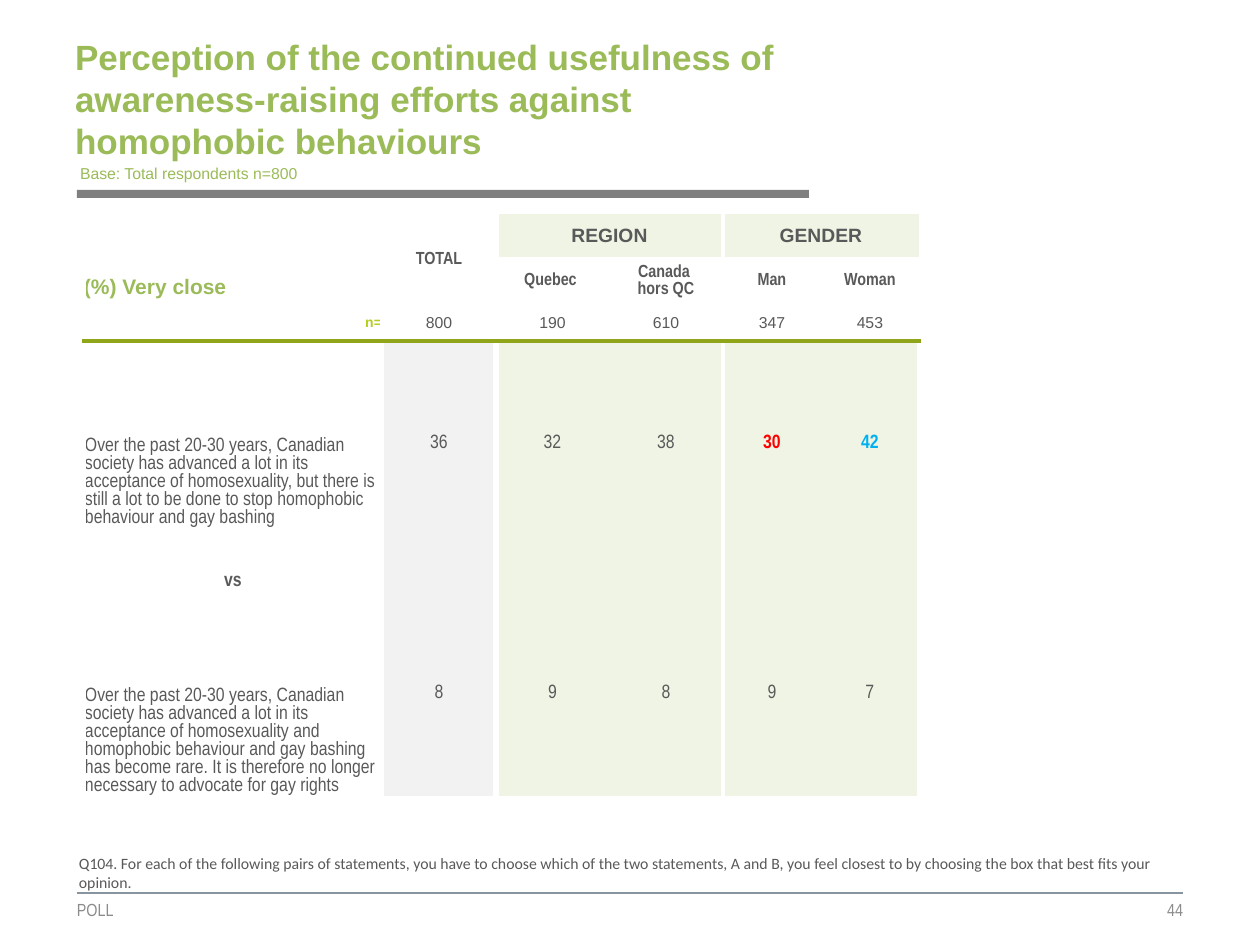
from dataclasses import dataclass
from typing import Any

import pptx
import pptx.util
import pptx.dml.color
import pptx.enum.shapes
import pptx.enum.text
import pptx.oxml

PX = 914400 // 126
ALIGN = pptx.enum.text.PP_ALIGN
ANCHOR = pptx.enum.text.MSO_ANCHOR
AUTO = pptx.enum.text.MSO_AUTO_SIZE

GREEN, DARK, PALE, GREY = "9BBB59", "595959", "EFF4E4", "F2F2F2"
LIME, OLIVE, RED, BLUE = "B5CC22", "91A51B", "FF0000", "00B0F0"
NARROW = "Arial Narrow"


@dataclass
class Style:
    size: int
    font: str = "Arial"
    color: str = DARK
    bold: bool = False
    align: Any = ALIGN.LEFT
    anchor: Any = ANCHOR.MIDDLE
    spacing: float = 1.0
    margins: tuple[int, int, int, int] = (0, 0, 0, 0)  # left, top, right, bottom


@dataclass
class TextBox:
    text: str
    box: tuple[int, int, int, int]
    style: Style
    wrap: bool = True


def px(value: int) -> int:
    return pptx.util.Emu(value * PX)


def rgb(value: str) -> pptx.dml.color.RGBColor:
    return pptx.dml.color.RGBColor.from_string(value)


def apply(target: Any, values: dict[str, Any]) -> None:
    for name, value in values.items():
        setattr(target, name, value)


def margins(style: Style) -> dict[str, int]:
    names = ("margin_left", "margin_top", "margin_right", "margin_bottom")
    return dict(zip(names, map(px, style.margins)))


def write(text_frame: Any, text: str, style: Style) -> None:
    paragraph = text_frame.paragraphs[0]
    apply(paragraph, {"alignment": style.align, "line_spacing": style.spacing})
    for index, line in enumerate(text.split("\n")):
        if index:
            paragraph.add_line_break()
        run = paragraph.add_run()
        run.text = line
        apply(run.font, {"size": pptx.util.Pt(style.size), "name": style.font, "bold": style.bold})
        run.font.color.rgb = rgb(style.color)


def fill_frame(shape: Any, text: str, style: Style, wrap: bool = True) -> None:
    apply(shape.text_frame, {"word_wrap": wrap, "auto_size": AUTO.NONE,
                             "vertical_anchor": style.anchor, **margins(style)})
    write(shape.text_frame, text, style)


def add_text(slide: Any, item: TextBox) -> None:
    shape = slide.shapes.add_textbox(*map(px, item.box))
    fill_frame(shape, item.text, item.style, item.wrap)


def set_border(cell: Any, side: str, color: str | None, width: float = 0) -> None:
    namespace = 'xmlns:a="http://schemas.openxmlformats.org/drawingml/2006/main"'
    paint = f'<a:solidFill><a:srgbClr val="{color}"/></a:solidFill>' if color else "<a:noFill/>"
    xml = f'<a:ln{side} {namespace} w="{int(width * 12700)}">{paint}</a:ln{side}>'
    cell._tc.get_or_add_tcPr().append(pptx.oxml.parse_xml(xml))


# Table content
COLUMNS = [298, 114, 113, 114, 98, 98]
ROWS = [43, 48, 36, 205, 45, 205]
RULE_ROW = 3  # the olive rule runs along the top of this row
GAPS = {0: 3, 1: 3, 2: 4.5, 4: 3, 6: 3}  # white gaps at column edges, in points
TIGHT = (1, 1, 1, 0)

GROUP = Style(11, bold=True, align=ALIGN.CENTER, margins=TIGHT)
HEADER = Style(10, NARROW, bold=True, align=ALIGN.CENTER, margins=TIGHT)
COUNT = Style(9, align=ALIGN.CENTER, margins=TIGHT)
VALUE = Style(11, NARROW, align=ALIGN.CENTER, margins=TIGHT)
LOW = Style(11, NARROW, RED, True, ALIGN.CENTER, margins=TIGHT)
HIGH = Style(11, NARROW, BLUE, True, ALIGN.CENTER, margins=TIGHT)
VERSUS = Style(11, NARROW, DARK, True, ALIGN.CENTER, ANCHOR.BOTTOM, margins=TIGHT)
STATEMENT = Style(11, NARROW, anchor=ANCHOR.BOTTOM, margins=TIGHT)
RAISED = Style(11, NARROW, anchor=ANCHOR.BOTTOM, margins=(1, 1, 1, 18))
MEASURE = Style(12, "Arial", GREEN, True, ALIGN.LEFT, ANCHOR.BOTTOM, 0.95, (0, 6, 0, 6))
BASE_LABEL = Style(8, "Arial", LIME, True, ALIGN.RIGHT, ANCHOR.MIDDLE, 0.95, (0, 6, 0, 6))

OPENING = "Over the past 20-30 years, Canadian society has advanced a lot in its acceptance of homosexuality"
CELLS = [
    [("", HEADER), ("TOTAL", HEADER), ("REGION", GROUP), ("", GROUP), ("GENDER", GROUP), ("", GROUP)],
    [("(%) Very close", MEASURE), ("", HEADER), ("Quebec ", HEADER), ("Canada \nhors QC", HEADER),
     ("Man", HEADER), ("Woman", HEADER)],
    [("n=", BASE_LABEL)] + [(count, COUNT) for count in ("800", "190", "610", "347", "453")],
    [(OPENING + ", but there is still a lot to be done to stop homophobic behaviour and gay bashing", RAISED),
     ("36", VALUE), ("32", VALUE), ("38", VALUE), ("30", LOW), ("42", HIGH)],
    [("vs", VERSUS)] + [("", VALUE)] * 5,
    [(OPENING + " and homophobic behaviour and gay bashing has become rare. It is therefore "
      "no longer necessary to advocate for gay rights", STATEMENT)]
    + [(value, VALUE) for value in ("8", "9", "8", "9", "7")],
]
MERGES = [((0, 1), (1, 1)), ((0, 2), (0, 3)), ((0, 4), (0, 5))]


def cell_fill(row: int, column: int) -> str | None:
    if column >= 2 and (row == 0 or row >= RULE_ROW):
        return PALE
    return GREY if column == 1 and row >= RULE_ROW else None


def format_cell(cell: Any, row: int, column: int, text: str, style: Style) -> None:
    apply(cell, {"vertical_anchor": style.anchor, **margins(style)})
    if text:
        write(cell.text_frame, text, style)
    for side, edge in (("L", column), ("R", column + 1)):
        set_border(cell, side, "FFFFFF" if edge in GAPS else None, GAPS.get(edge, 0))
    for side, edge in (("T", row), ("B", row + 1)):
        set_border(cell, side, OLIVE if edge == RULE_ROW else None, 3)
    color = cell_fill(row, column)
    if color:
        cell.fill.solid()
        cell.fill.fore_color.rgb = rgb(color)
    else:
        cell.fill.background()


def add_results_table(slide: Any) -> None:
    box = (84, 214, sum(COLUMNS), sum(ROWS))
    table = slide.shapes.add_table(len(ROWS), len(COLUMNS), *map(px, box)).table
    apply(table, {"first_row": False, "horz_banding": False})
    for column, width in zip(table.columns, COLUMNS):
        column.width = px(width)
    for row, height in zip(table.rows, ROWS):
        row.height = px(height)
    for row, contents in enumerate(CELLS):
        for column, (text, style) in enumerate(contents):
            format_cell(table.cell(row, column), row, column, text, style)
    for first, last in MERGES:
        table.cell(*first).merge(table.cell(*last))


FOOTER = Style(10, NARROW, "8C8C8C")
PAGE = Style(10, NARROW, "8C8C8C", align=ALIGN.RIGHT)
TEXTS = [
    TextBox("POLL", (77, 893, 353, 33), FOOTER),
    TextBox("44", (825, 893, 358, 33), PAGE),
    TextBox("Base: Total respondents n=800", (67, 158, 246, 32),
            Style(9, "Arial", GREEN, anchor=ANCHOR.TOP, margins=(13, 6, 13, 6)), wrap=False),
    TextBox("Q104. For each of the following pairs of statements, you have to choose which of the two "
            "statements, A and B, you feel closest to by choosing the box that best fits your opinion.",
            (66, 827, 1139, 71), Style(9, "Calibri", anchor=ANCHOR.BOTTOM, margins=(13, 6, 13, 6))),
]


def main() -> None:
    presentation = pptx.Presentation()
    apply(presentation, {"slide_width": px(1260), "slide_height": px(945)})
    slide = presentation.slides.add_slide(presentation.slide_layouts[5])

    # Title and the bar below it
    title = slide.shapes.title
    apply(title, dict(zip(("left", "top", "width", "height"), map(px, (75, 55, 735, 87)))))
    fill_frame(title, "Perception of the continued usefulness of awareness-raising efforts "
               "against homophobic behaviours", Style(20, color=GREEN, bold=True))
    bar = slide.shapes.add_shape(pptx.enum.shapes.MSO_SHAPE.RECTANGLE, *map(px, (77, 190, 732, 8)))
    bar.shadow.inherit = False
    bar.fill.solid()
    bar.fill.fore_color.rgb = rgb("7F7F7F")
    bar.line.fill.background()

    # Footer rule
    rule = slide.shapes.add_connector(pptx.enum.shapes.MSO_CONNECTOR.STRAIGHT,
                                      *map(px, (77, 893, 1183, 893)))
    rule.line.color.rgb = rgb("88959E")
    rule.line.width = pptx.util.Pt(1.5)
    rule._element.spPr.append(pptx.oxml.parse_xml(
        '<a:effectLst xmlns:a="http://schemas.openxmlformats.org/drawingml/2006/main"/>'))

    # Results and surrounding text
    add_results_table(slide)
    for item in TEXTS:
        add_text(slide, item)
    presentation.save("out.pptx")


if __name__ == "__main__":
    main()
